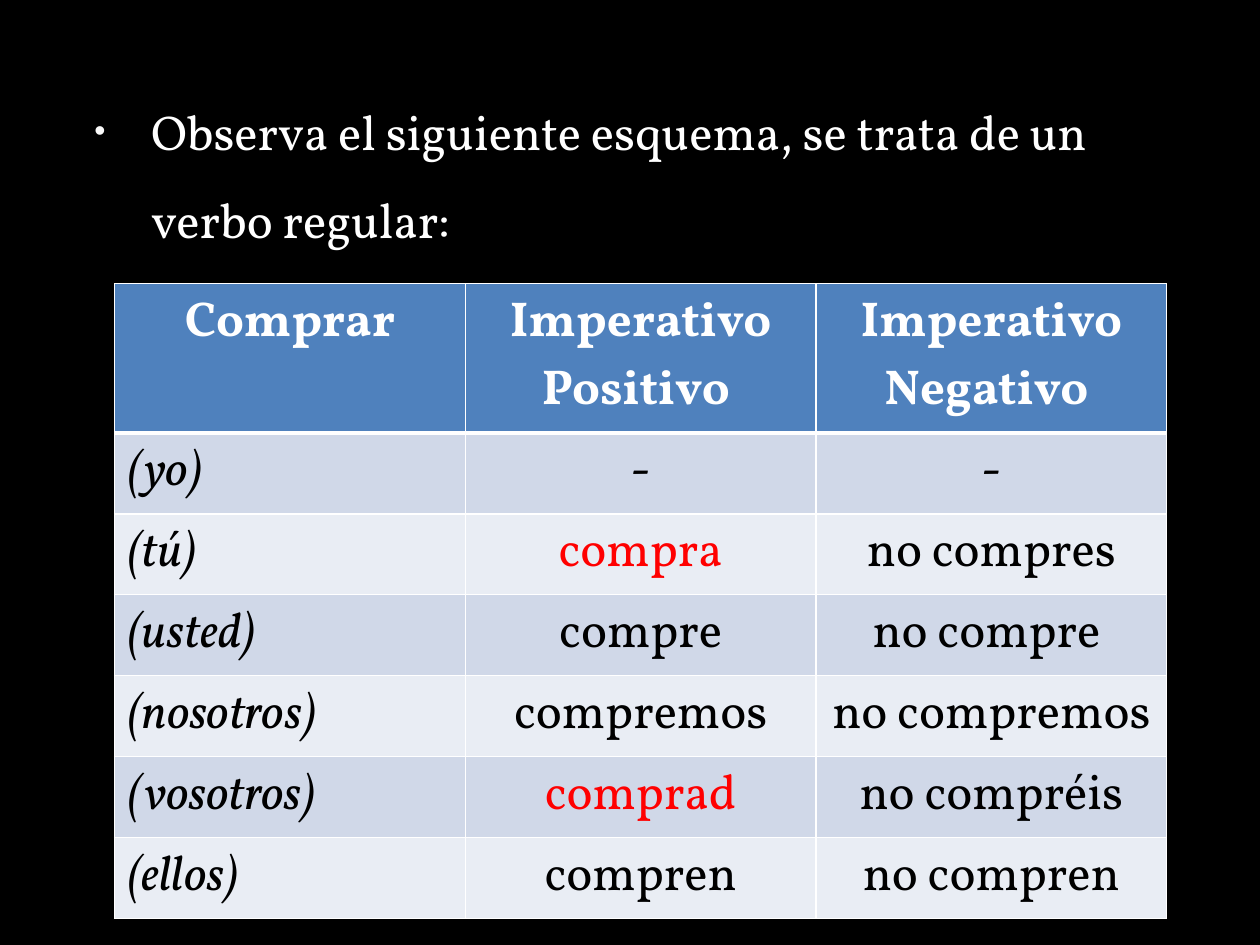
from lxml import etree
from pptx import Presentation
from pptx.dml.color import RGBColor
from pptx.enum.text import MSO_AUTO_SIZE, PP_ALIGN
from pptx.oxml.ns import qn
from pptx.util import Cm, Pt

CENTER, LEFT = PP_ALIGN.CENTER, PP_ALIGN.LEFT
NO_AUTOFIT = MSO_AUTO_SIZE.NONE

BLACK = RGBColor(0x00, 0x00, 0x00)
WHITE = RGBColor(0xFF, 0xFF, 0xFF)
RED = RGBColor(0xFF, 0x00, 0x00)
BULLET = RGBColor(0xF9, 0xF9, 0xF9)
HEADER_FILL = RGBColor(0x4F, 0x81, 0xBD)
BAND_FILLS = (RGBColor(0xE9, 0xED, 0xF4), RGBColor(0xD0, 0xD8, 0xE8))

INTRO = "Observa el siguiente esquema, se trata de un verbo regular:"
CONJUGATION = [
    ("Comprar", "Imperativo Positivo ", "Imperativo Negativo "),
    ("(yo)", "-", "-"),
    ("(tú)", "compra", "no compres"),
    ("(usted)", "compre", "no compre "),
    ("(nosotros)", "compremos", "no compremos "),
    ("(vosotros)", "comprad", "no compréis"),
    ("(ellos)", "compren", "no compren"),
]
HIGHLIGHTED = {"compra", "comprad"}

BASE_FONT = {"name": "Vollkorn", "size": Pt(28)}
COL_WIDTH, HEADER_HEIGHT, ROW_HEIGHT = Cm(7.07), Cm(2.72), Cm(1.57)


def write(p, text, color, **styles):
    r = p.add_run()
    r.text = text
    for name, value in {**BASE_FONT, **styles}.items():
        setattr(r.font, name, value)
    r.font.color.rgb = color


def add_bullet(p, char, color, percent):
    """Give the paragraph a hanging bullet."""
    pPr = p._p.get_or_add_pPr()
    pPr.set("marL", str(Cm(1.52)))
    pPr.set("indent", str(-Cm(1.14)))
    clr = etree.SubElement(pPr, qn("a:buClr"))
    etree.SubElement(clr, qn("a:srgbClr"), val=str(color))
    etree.SubElement(pPr, qn("a:buSzPct"), val=str(percent * 1000))
    etree.SubElement(pPr, qn("a:buFont"), typeface="Arial")
    etree.SubElement(pPr, qn("a:buChar"), char=char)


def set_borders(cell, color, widths):
    """Draw solid cell borders; call before the fill is set."""
    tcPr = cell._tc.get_or_add_tcPr()
    for side, width in widths.items():
        ln = etree.SubElement(tcPr, qn(f"a:ln{side}"), w=str(Pt(width)))
        fill = etree.SubElement(ln, qn("a:solidFill"))
        etree.SubElement(fill, qn("a:srgbClr"), val=str(color))


def add_intro(slide):
    sp = slide.placeholders[1]
    sp.left, sp.top, sp.width, sp.height = Cm(1.27), Cm(1.32), Cm(22.86), Cm(4.39)
    tf = sp.text_frame
    tf.word_wrap = True
    tf.auto_size = NO_AUTOFIT
    p = tf.paragraphs[0]
    p.line_spacing = 1.5
    add_bullet(p, "•", BULLET, 65)
    write(p, INTRO, WHITE)


def add_conjugation(slide):
    n_rows, n_cols = len(CONJUGATION), len(CONJUGATION[0])
    height = HEADER_HEIGHT + (n_rows - 1) * ROW_HEIGHT
    table = slide.shapes.add_table(
        n_rows, n_cols, Cm(2.31), Cm(5.72), n_cols * COL_WIDTH, height).table
    for col in table.columns:
        col.width = COL_WIDTH
    for i, texts in enumerate(CONJUGATION):
        header = i == 0
        table.rows[i].height = HEADER_HEIGHT if header else ROW_HEIGHT
        for j, text in enumerate(texts):
            pronoun = j == 0 and not header
            cell = table.cell(i, j)
            set_borders(cell, WHITE, {"L": 1, "R": 1, "T": 3 if i == 1 else 1,
                                      "B": 3 if header else 1})
            cell.fill.solid()
            cell.fill.fore_color.rgb = HEADER_FILL if header else BAND_FILLS[i % 2]
            color = WHITE if header else RED if text in HIGHLIGHTED else BLACK
            p = cell.text_frame.paragraphs[0]
            p.alignment = LEFT if pronoun else CENTER
            write(p, text, color, bold=header, italic=pronoun)


def main():
    prs = Presentation()
    prs.slide_width, prs.slide_height = Cm(25.4), Cm(19.05)
    slide = prs.slides.add_slide(prs.slide_layouts[1])
    slide.background.fill.solid()
    slide.background.fill.fore_color.rgb = BLACK
    title = slide.shapes.title.element
    title.getparent().remove(title)
    add_intro(slide)
    add_conjugation(slide)
    prs.save("out.pptx")


if __name__ == "__main__":
    main()
